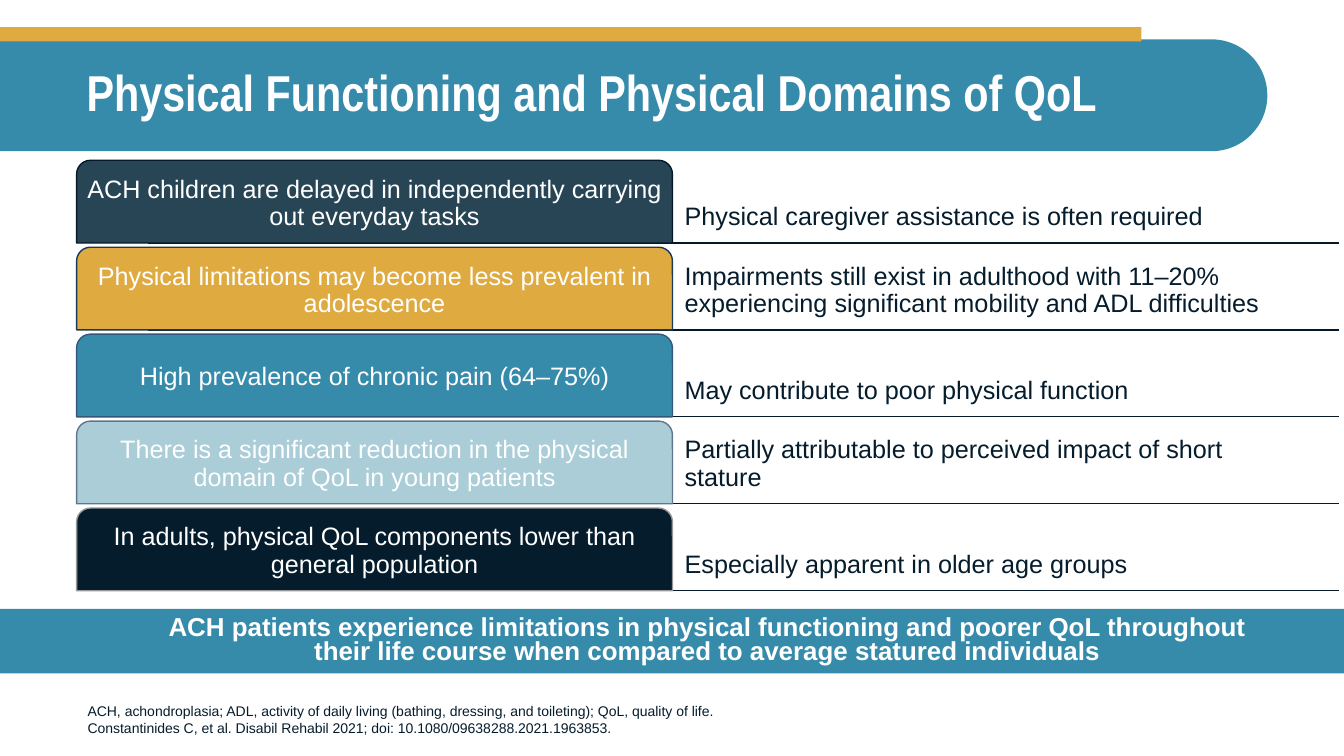
from dataclasses import dataclass

from lxml.etree import SubElement
from pptx import Presentation
from pptx.dml.color import RGBColor
from pptx.enum.shapes import MSO_CONNECTOR, MSO_SHAPE
from pptx.enum.text import MSO_ANCHOR as Anchor, PP_ALIGN as Align
from pptx.oxml.ns import qn
from pptx.util import Inches, Pt

COLORS = {
    "white": "FFFFFF",
    "ink": "051C2C",
    "rule": "051928",
    "teal": "368BAB",
    "gold": "DFAA40",
    "slate": "274554",
    "pale": "AACDD8",
    "navy line": "163A57",
    "blue line": "34587A",
    "steel line": "60768F",
    "grey line": "989898",
}


@dataclass
class Finding:
    label: str
    detail: str
    fill: str
    line: str


@dataclass
class TextStyle:
    size: float
    color: str = "white"
    font: str = "Arial"
    bold: bool = False
    align: Align = Align.LEFT
    anchor: Anchor = Anchor.MIDDLE
    spacing: float = 0.9
    insets: tuple[float, float, float, float] = (0.1, 0.05, 0.1, 0.05)


FINDINGS = [
    Finding("ACH children are delayed in independently carrying out everyday tasks",
            "Physical caregiver assistance is often required", "slate", "rule"),
    Finding("Physical limitations may become less prevalent in adolescence",
            "Impairments still exist in adulthood with 11–20% experiencing "
            "significant mobility and ADL difficulties", "gold", "navy line"),
    Finding("High prevalence of chronic pain (64–75%)",
            "May contribute to poor physical function", "teal", "blue line"),
    Finding("There is a significant reduction in the physical domain of QoL in young patients",
            "Partially attributable to perceived impact of short stature", "pale", "steel line"),
    Finding("In adults, physical QoL components lower than general population",
            "Especially apparent in older age groups", "ink", "grey line"),
]

TITLE = TextStyle(36, font="Arial Narrow", bold=True)
LABEL = TextStyle(18, align=Align.CENTER, insets=(0.04, 0.04, 0.04, 0.04))
DETAIL = TextStyle(18, "ink", anchor=Anchor.BOTTOM, insets=(0.12, 0.04, 0.04, 0.12))
NOTE = TextStyle(10, "ink", anchor=Anchor.BOTTOM, spacing=1.0)
BANNER = TextStyle(18.5, bold=True, align=Align.CENTER, spacing=0.8,
                   insets=(0.79, 0.05, 0.79, 0.05))

SLIDE_WIDTH, SLIDE_HEIGHT = 13.33, 7.5
ROW_TOP, ROW_PITCH, ROW_HEIGHT = 1.59, 3.45 / 4, 0.82
LABEL_LEFT, COLUMN_WIDTH = 0.76, 5.91
RULE_LEFT, RULE_RIGHT = 1.47, 13.28


def color(name: str) -> RGBColor:
    return RGBColor.from_string(COLORS[name])


def write(shape, text: str, style: TextStyle):
    frame = shape.text_frame
    frame.word_wrap = True
    frame.vertical_anchor = style.anchor
    (frame.margin_left, frame.margin_top,
     frame.margin_right, frame.margin_bottom) = map(Inches, style.insets)
    paragraph = frame.paragraphs[0]
    paragraph.text = text
    paragraph.alignment = style.align
    paragraph.line_spacing = style.spacing
    paragraph.font.name = style.font
    paragraph.font.size = Pt(style.size)
    paragraph.font.bold = style.bold
    paragraph.font.color.rgb = color(style.color)
    return paragraph


def add_block(slide, kind: MSO_SHAPE, box: tuple, fill: str, line: str | None = None):
    shape = slide.shapes.add_shape(kind, *map(Inches, box))
    shape.shadow.inherit = False
    shape.fill.solid()
    shape.fill.fore_color.rgb = color(fill)
    if line:
        shape.line.color.rgb = color(line)
        shape.line.width = Pt(1)
    else:
        shape.line.fill.background()
    return shape


def add_text(slide, box: tuple, text: str, style: TextStyle) -> None:
    write(slide.shapes.add_textbox(*map(Inches, box)), text, style)


def add_rule(slide, y: float) -> None:
    rule = slide.shapes.add_connector(
        MSO_CONNECTOR.STRAIGHT, Inches(RULE_LEFT), Inches(y), Inches(RULE_RIGHT), Inches(y))
    rule.line.color.rgb = color("rule")
    rule.line.width = Pt(1)
    SubElement(rule._element.spPr, qn("a:effectLst"))


def add_finding(slide, finding: Finding, top: float) -> None:
    add_text(slide, (LABEL_LEFT + COLUMN_WIDTH, top, COLUMN_WIDTH, ROW_HEIGHT),
             finding.detail, DETAIL)
    tab = add_block(slide, MSO_SHAPE.ROUND_2_SAME_RECTANGLE,
                    (LABEL_LEFT, top, COLUMN_WIDTH, ROW_HEIGHT), finding.fill, finding.line)
    write(tab, finding.label, LABEL)


def main() -> None:
    presentation = Presentation()
    presentation.slide_width = Inches(SLIDE_WIDTH)
    presentation.slide_height = Inches(SLIDE_HEIGHT)
    slide = presentation.slides.add_slide(presentation.slide_layouts[6])

    # Header band, rounded on its right end, and title
    header = add_block(slide, MSO_SHAPE.ROUND_2_SAME_RECTANGLE, (5.73, -5.34, 1.11, 12.57), "teal")
    header.adjustments[0], header.adjustments[1] = 0, 0.5
    header.rotation = 270
    add_block(slide, MSO_SHAPE.RECTANGLE, (0, 0.27, 11.32, 0.14), "gold")
    add_text(slide, (0.76, 0.39, 11.81, 1.1),
             "Physical Functioning and Physical Domains of QoL", TITLE)

    # Findings, with the rules behind them
    tops = [ROW_TOP + row * ROW_PITCH for row in range(len(FINDINGS))]
    for top in tops:
        add_rule(slide, top + ROW_HEIGHT)
    for finding, top in zip(FINDINGS, tops):
        add_finding(slide, finding, top)

    # Abbreviations and reference
    add_text(slide, (0.77, 6.71, 9.88, 0.64),
             "ACH, achondroplasia; ADL, activity of daily living (bathing, dressing, and "
             "toileting); QoL, quality of life.\n"
             "Constantinides C, et al. Disabil Rehabil 2021; doi: 10.1080/09638288.2021.1963853.",
             NOTE)

    # Conclusion banner
    banner = add_block(slide, MSO_SHAPE.RECTANGLE, (0, 6.04, SLIDE_WIDTH, 0.64), "teal")
    conclusion = write(
        banner,
        "ACH patients experience limitations in physical functioning and poorer QoL throughout "
        "their life course when compared to average statured individuals", BANNER)
    conclusion._p.get_or_add_pPr().set("marL", str(Inches(0.69)))

    presentation.save("out.pptx")


if __name__ == "__main__":
    main()
